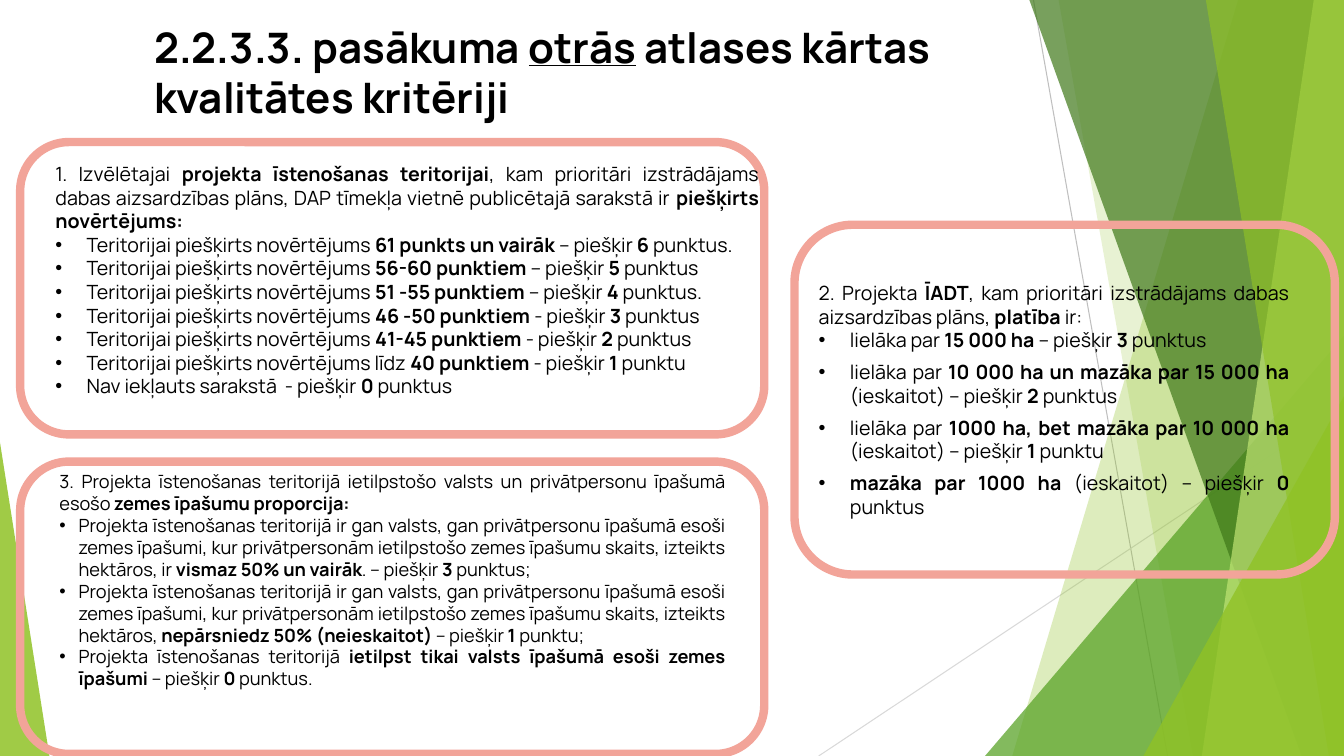
from lxml import etree
from pptx import Presentation
from pptx.dml.color import RGBColor
from pptx.enum.shapes import MSO_CONNECTOR, MSO_SHAPE
from pptx.enum.text import MSO_ANCHOR, MSO_AUTO_SIZE, PP_ALIGN
from pptx.oxml.ns import qn
from pptx.util import Emu, Inches, Pt

LEFT, JUSTIFY = PP_ALIGN.LEFT, PP_ALIGN.JUSTIFY
TOP, NO_FIT = MSO_ANCHOR.TOP, MSO_AUTO_SIZE.NONE
TRIANGLE, ROUNDED = MSO_SHAPE.ISOSCELES_TRIANGLE, MSO_SHAPE.ROUNDED_RECTANGLE
STRAIGHT = MSO_CONNECTOR.STRAIGHT

ROWS = 75
COLUMNS = 133.33
TITLE_ONLY = 5
LIME, GREEN, DARK_GREEN, PALE_LIME = "90C226", "54A021", "3F7819", "C0E474"


def rgb(value):
    return RGBColor.from_string(value)


class SlideBuilder:
    """Draws on one page; lengths are columns and rows of a square grid, 75 rows high."""
    font_name = "Manrope"
    ink = "000000"
    frame_color = "F2A499"
    frame_width = 6

    def __init__(self, deck):
        self.unit = deck.slide_height / ROWS
        self.page = deck.slides.add_slide(deck.slide_layouts[TITLE_ONLY])

    def cells(self, *lengths):
        return [Emu(round(length * self.unit)) for length in lengths]

    def tint(self, shape, color, opacity):
        """Fill without an outline; opacity is in percent."""
        shape.shadow.inherit = False
        shape.line.fill.background()
        shape.fill.solid()
        shape.fill.fore_color.rgb = rgb(color)
        color_node = shape.fill._xPr.find(".//" + qn("a:srgbClr"))
        etree.SubElement(color_node, qn("a:alpha"), val=str(opacity * 1000))

    def ray(self, start, end, color):
        line = self.page.shapes.add_connector(STRAIGHT, *self.cells(*start, *end))
        line.line.color.rgb = rgb(color)
        line.line.width = Pt(0.75)
        etree.SubElement(line._element.spPr, qn("a:effectLst"))

    def facet(self, top_column, bottom_column, color, opacity):
        """Full-height panel with a slanted left side, reaching the right edge."""
        corners = [(top_column, 0), (COLUMNS, 0), (COLUMNS, ROWS), (bottom_column, ROWS)]
        points = [tuple(self.cells(*corner)) for corner in corners]
        builder = self.page.shapes.build_freeform(*points[0])
        builder.add_line_segments(points[1:], close=True)
        self.tint(builder.convert_to_shape(), color, opacity)

    def wedge(self, left, top, width, apex, color, opacity):
        """Triangle standing on the bottom edge; apex runs from 0 (left) to 1 (right)."""
        shape = self.page.shapes.add_shape(
            TRIANGLE, *self.cells(left, top, width, ROWS - top))
        shape.adjustments[0] = apex
        self.tint(shape, color, opacity)

    def frame(self, *place):
        shape = self.page.shapes.add_shape(ROUNDED, *self.cells(*place))
        shape.shadow.inherit = False
        shape.fill.background()
        shape.line.color.rgb = rgb(self.frame_color)
        shape.line.width = Pt(self.frame_width)

    def add_span(self, para, text, size, bold=False, underline=False):
        span = para.add_run()
        span.text = text
        font = span.font
        font.name, font.size, font.bold = self.font_name, Pt(size), bold
        font.underline = underline
        font.color.rgb = rgb(self.ink)

    def add_marked(self, para, text, size):
        """Text between asterisks is bold."""
        for index, part in enumerate(text.split("*")):
            if part:
                self.add_span(para, part, size, bold=index % 2 == 1)

    def title(self, place, size, parts):
        box = self.page.shapes.title
        box.left, box.top, box.width, box.height = self.cells(*place)
        text = box.text_frame
        text.word_wrap, text.auto_size, text.vertical_anchor = True, NO_FIT, TOP
        para = text.paragraphs[0]
        para.alignment = LEFT
        for part, underline in parts:
            self.add_span(para, part, size, bold=True, underline=underline)

    def criterion(self, place, size, indent, heading, bullets, gap=0):
        """Heading followed by bullets; gap is the space after each bullet in points."""
        text = self.page.shapes.add_textbox(*self.cells(*place)).text_frame
        text.word_wrap, text.auto_size, text.vertical_anchor = True, NO_FIT, TOP
        text.margin_left = text.margin_right = Inches(0.05)
        text.margin_top = text.margin_bottom = Inches(0.03)
        para = text.paragraphs[0]
        para.alignment = JUSTIFY
        self.add_marked(para, heading, size)
        for bullet in bullets:
            para = text.add_paragraph()
            para.alignment = JUSTIFY
            para.space_after = Pt(gap)
            self.add_bullet(para, indent)
            self.add_marked(para, bullet, size)

    def add_bullet(self, para, indent):
        settings = para._p.get_or_add_pPr()
        depth = self.cells(indent)[0]
        settings.set("marL", str(depth))
        settings.set("indent", str(-depth))
        etree.SubElement(settings, qn("a:buFont"), typeface="Arial")
        etree.SubElement(settings, qn("a:buChar"), char="•")


def draw_background(slide):
    slide.ray((102.5, 0), (115.8, ROWS), "BFBFBF")
    slide.ray((COLUMNS, 40.3), (81.2, ROWS), "D9D9D9")
    slide.facet(122.8, 100.4, LIME, 30)
    slide.facet(105, 118.3, LIME, 20)
    slide.wedge(97.7, 33.3, 35.6, 1, GREEN, 72)
    slide.facet(102.1, 129.1, DARK_GREEN, 70)
    slide.facet(130.3, 119.2, PALE_LIME, 70)
    slide.facet(119.6, 131.8, LIME, 65)
    slide.wedge(113.4, 39.3, 19.9, 1, LIME, 80)
    slide.wedge(0, 43.9, 4.9, 0, LIME, 85)


def draw_criteria(slide):
    for place in ((2, 14.1, 73.8, 29), (78.8, 22.3, 53.6, 34.7), (2, 45.8, 73.8, 29)):
        slide.frame(*place)

    scores = [
        "*61 punkts un vairāk *– piešķir *6* punktus.",
        "*56-60 punktiem *– piešķir *5* punktus",
        "*51 -55 punktiem *– piešķir *4 *punktus.",
        "*46 -50 punktiem *- piešķir *3* punktus",
        "*41-45 punktiem *- piešķir *2* punktus",
        "līdz *40 punktiem *- piešķir *1 *punktu",
    ]
    slide.criterion(
        (5, 15.8, 70.8, 26.4), 14, 3.1,
        "1. Izvēlētajai *projekta īstenošanas teritorijai*, kam prioritāri izstrādājams "
        "dabas aizsardzības plāns, DAP tīmekļa vietnē publicētajā sarakstā ir"
        "* piešķirts novērtējums:*",
        ["Teritorijai piešķirts novērtējums " + score for score in scores]
        + ["Nav iekļauts sarakstā  - piešķir *0* punktus"])

    slide.criterion(
        (80.7, 27.6, 47.7, 27.4), 14, 3.1,
        "2. Projekta *ĪADT*, kam prioritāri izstrādājams dabas aizsardzības plāns, "
        "*platība* ir:",
        ["lielāka par *15 000 ha *– piešķir *3 *punktus",
         "lielāka par *10 000 ha un mazāka par 15 000 ha *(ieskaitot) – piešķir *2* punktus",
         "lielāka par *1000 ha, bet mazāka par 10 000 ha *(ieskaitot) – piešķir* 1 *punktu",
         "*mazāka par 1000 ha* (ieskaitot) – piešķir *0* punktus"],
        gap=6)

    territory = "Projekta īstenošanas teritorijā "
    mixed = (territory + "ir gan valsts, gan privātpersonu īpašumā esoši zemes īpašumi, kur "
             "privātpersonām ietilpstošo zemes īpašumu skaits, izteikts hektāros, ")
    slide.criterion(
        (5.4, 46.4, 67, 26.8), 13, 1.9,
        "3. Projekta īstenošanas teritorijā ietilpstošo valsts un privātpersonu īpašumā "
        "esošo *zemes īpašumu proporcija:*",
        [mixed + "ir *vismaz 50% un vairāk*. – piešķir *3* punktus;",
         mixed + "*nepārsniedz 50% (neieskaitot) *– piešķir *1* punktu;",
         territory + "*ietilpst tikai valsts īpašumā esoši zemes īpašumi *– piešķir *0* punktus."])


def main():
    deck = Presentation()
    deck.slide_width, deck.slide_height = Inches(13.33), Inches(7.5)
    slide = SlideBuilder(deck)
    draw_background(slide)
    slide.title((14.3, 1.6, 87, 11.1), 30, [
        ("2.2.3.3. pasākuma ", False),
        ("otrās", True),
        (" atlases kārtas kvalitātes kritēriji", False)])
    draw_criteria(slide)
    deck.save("out.pptx")


if __name__ == "__main__":
    main()
